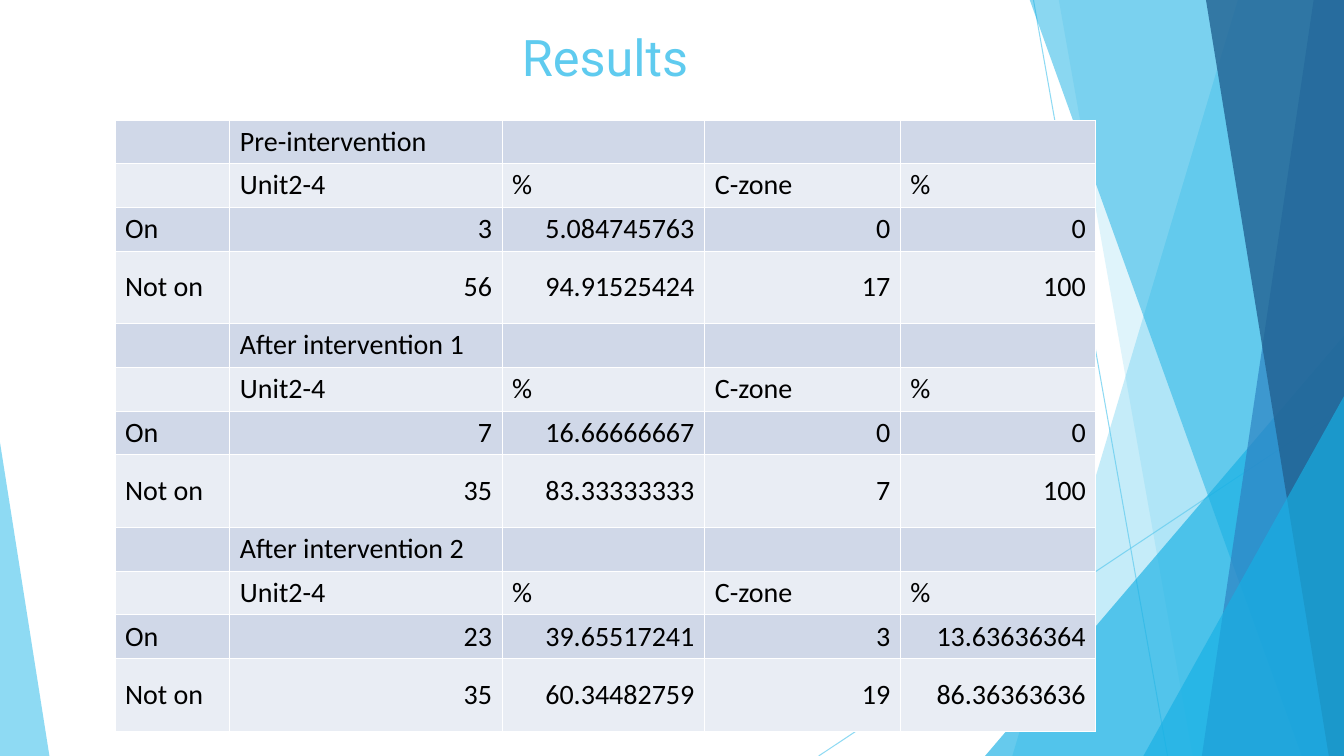
"""Builds the Results slide: a three-phase intervention table over blue facets."""
import lxml.etree
import pptx
import pptx.dml.color
import pptx.enum.shapes
import pptx.enum.text
import pptx.oxml
import pptx.oxml.ns
import pptx.util

PX = 9144
WIDTH, HEIGHT = 1333, 750
COLORS = {
    "sky": "5FCBEF", "cyan": "17B0E4", "blue": "2E83C3", "navy": "226292",
    "band_dark": "D0D8E8", "band_light": "E9EDF4", "black": "000000", "white": "FFFFFF",
}
ALIGN = pptx.enum.text.PP_ALIGN
qn = pptx.oxml.ns.qn


def write_text(frame, text, *, size, font, color, align=ALIGN.LEFT, spacing=None):
    paragraph = frame.paragraphs[0]
    paragraph.alignment = align
    if spacing:
        paragraph.line_spacing = pptx.util.Pt(spacing)
    run = paragraph.add_run()
    run.text = text
    run.font.size = pptx.util.Pt(size)
    run.font.name = font
    run.font.color.rgb = pptx.dml.color.RGBColor.from_string(COLORS[color])


def tint(fill, color, opacity, element):
    fill.solid()
    fill.fore_color.rgb = pptx.dml.color.RGBColor.from_string(COLORS[color])
    rgb = next(element.spPr.iter(qn("a:srgbClr")))
    lxml.etree.SubElement(rgb, qn("a:alpha")).set("val", str(opacity * 1000))


deck = pptx.Presentation()
deck.slide_width, deck.slide_height = WIDTH * PX, HEIGHT * PX
slide = deck.slides.add_slide(deck.slide_layouts[6])
shapes = slide.shapes

for x1, y1, x2, y2 in [(1025, 0, 1158, HEIGHT), (WIDTH, 403, 812, HEIGHT)]:
    ray = shapes.add_connector(
        pptx.enum.shapes.MSO_CONNECTOR.STRAIGHT, x1 * PX, y1 * PX, x2 * PX, y2 * PX)
    ray.line.width = pptx.util.Pt(0.75)
    tint(ray.line.fill, "sky", 70, ray._element)
    lxml.etree.SubElement(ray._element.spPr, qn("a:effectLst"))

# fmt: off
facets = [
    ("panel", (1228, 1004), "sky", 36),
    ("panel", (1050, 1183), "sky", 20),
    ("triangle", (977, 333, 356, 1), "cyan", 66),
    ("panel", (1021, 1291), "cyan", 50),
    ("panel", (1303, 1192), "blue", 70),
    ("panel", (1196, 1318), "navy", 80),
    ("triangle", (1134, 393, 199, 1), "cyan", 66),
    ("triangle", (0, 439, 49, 0), "sky", 70),
]
for kind, geometry, color, opacity in facets:
    if kind == "panel":
        top_left, bottom_left = geometry
        outline = shapes.build_freeform(top_left, -1, scale=PX)
        outline.add_line_segments([(WIDTH, -1), (WIDTH, HEIGHT), (bottom_left, HEIGHT)])
        facet = outline.convert_to_shape()
    else:
        left, top, width, apex = geometry
        facet = shapes.add_shape(
            pptx.enum.shapes.MSO_SHAPE.ISOSCELES_TRIANGLE,
            left * PX, top * PX, width * PX, (HEIGHT - top) * PX)
        facet.adjustments[0] = apex
    facet.shadow.inherit = False
    facet.line.fill.background()
    tint(facet.fill, color, opacity, facet._element)

title = shapes.add_textbox(25 * PX, 21 * PX, 1150 * PX, 145 * PX).text_frame
title.word_wrap = True
write_text(title, "Results", size=36, font="Roboto", color="sky", align=ALIGN.CENTER)

phases = [
    ("Pre-intervention",
     ["3", "5.084745763", "0", "0"], ["56", "94.91525424", "17", "100"]),
    ("After intervention 1",
     ["7", "16.66666667", "0", "0"], ["35", "83.33333333", "7", "100"]),
    ("After intervention 2",
     ["23", "39.65517241", "3", "13.63636364"], ["35", "60.34482759", "19", "86.36363636"]),
]
rows = []
for phase, on_counts, not_on_counts in phases:
    rows += [
        ["", phase, "", "", ""],
        ["", "Unit2-4", "%", "C-zone", "%"],
        ["On", *on_counts],
        ["Not on", *not_on_counts],
    ]

column_widths = [114, 270, 201, 194, 194]
row_heights = [43, 43, 43, 72] * len(phases)
results = shapes.add_table(
    len(rows), len(column_widths), 114 * PX, 119 * PX,
    sum(column_widths) * PX, sum(row_heights) * PX).table
results.first_row = False
results.horz_banding = False
for column, width in zip(results.columns, column_widths):
    column.width = width * PX
for row, height in zip(results.rows, row_heights):
    row.height = height * PX

for r, values in enumerate(rows):
    for c, value in enumerate(values):
        cell = results.cell(r, c)
        cell.vertical_anchor = pptx.enum.text.MSO_ANCHOR.MIDDLE
        properties = cell._tc.get_or_add_tcPr()
        for side in ("lnL", "lnR", "lnT", "lnB"):
            border = lxml.etree.SubElement(properties, qn(f"a:{side}"), w="9525")
            paint = lxml.etree.SubElement(border, qn("a:solidFill"))
            lxml.etree.SubElement(paint, qn("a:srgbClr"), val=COLORS["white"])
        cell.fill.solid()
        band = "band_light" if r % 2 else "band_dark"
        cell.fill.fore_color.rgb = pptx.dml.color.RGBColor.from_string(COLORS[band])
        if value:
            is_count = r % 4 >= 2 and c > 0
            write_text(cell.text_frame, value, size=20, font="Calibri", color="black",
                       align=ALIGN.RIGHT if is_count else ALIGN.LEFT, spacing=24)

deck.save("out.pptx")
